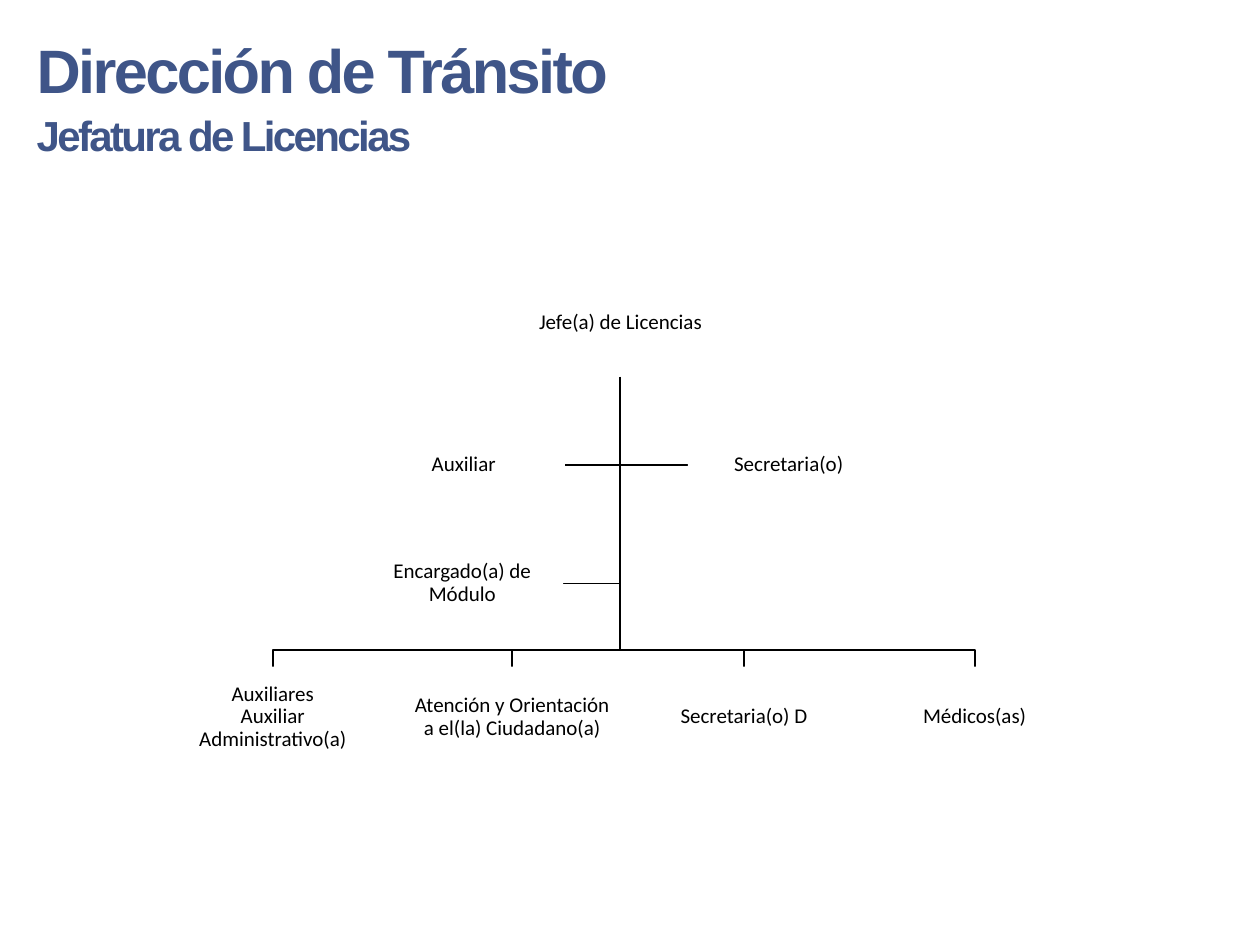
from pptx import Presentation
from pptx.dml.color import RGBColor
from pptx.enum.shapes import MSO_SHAPE
from pptx.enum.text import MSO_ANCHOR, MSO_AUTO_SIZE, PP_ALIGN
from pptx.util import Pt

BLUE = RGBColor(0x3F, 0x55, 0x88)
BLACK = RGBColor(0, 0, 0)
WHITE = RGBColor(255, 255, 255)

TRUNK_X, TRUNK_TOP = 354.24, 215.28
BUS_Y, TEAM_TOP = 371.5, 380.9
TEAM_SIZE = (116, 57.6)
STAFF_SIZE = (115.2, 54.7)


def apply_format(target, values):
    for name, value in values.items():
        setattr(target, name, value)


class OrgChart:
    """Holds the chart style and the slide being drawn."""

    title_font = {"name": "Arial", "bold": True}
    box_font = {"name": "Calibri", "size": Pt(12)}
    box_para = {"alignment": PP_ALIGN.CENTER, "line_spacing": 0.9,
                "space_before": Pt(0), "space_after": Pt(0)}
    box_frame = {"word_wrap": True, "vertical_anchor": MSO_ANCHOR.MIDDLE,
                 "margin_left": Pt(0.72), "margin_right": Pt(0.72),
                 "margin_top": Pt(0.72), "margin_bottom": Pt(0.72)}
    title_frame = {"word_wrap": True, "vertical_anchor": MSO_ANCHOR.TOP,
                   "auto_size": MSO_AUTO_SIZE.NONE,
                   "margin_left": Pt(7.2), "margin_right": Pt(7.2),
                   "margin_top": Pt(7), "margin_bottom": Pt(0)}

    def __init__(self, page):
        self.page = page

    def title(self, lines, left, top, width, height):
        """Write (text, size) lines into the title placeholder."""
        title = self.page.shapes.title
        apply_format(title, {"left": Pt(left), "top": Pt(top),
                             "width": Pt(width), "height": Pt(height)})
        frame = title.text_frame
        apply_format(frame, self.title_frame)
        for index, (text, size) in enumerate(lines):
            para = frame.add_paragraph() if index else frame.paragraphs[0]
            apply_format(para, {"alignment": PP_ALIGN.LEFT, "line_spacing": 1.0,
                                "space_before": Pt(2 * index), "space_after": Pt(0)})
            span = para.add_run()
            span.text = text
            apply_format(span.font, {**self.title_font, "size": Pt(size)})
            span.font.color.rgb = BLUE
            span.font._element.set("spc", "-150")

    def box(self, text, left, top, size):
        box = self.page.shapes.add_shape(
            MSO_SHAPE.RECTANGLE, Pt(left), Pt(top), *map(Pt, size))
        box.shadow.inherit = False
        box.fill.solid()
        box.fill.fore_color.rgb = WHITE
        box.line.fill.background()
        frame = box.text_frame
        apply_format(frame, self.box_frame)
        frame.text = text
        for para in frame.paragraphs:
            apply_format(para, self.box_para)
            apply_format(para.font, self.box_font)
            para.font.color.rgb = BLACK

    def branch(self, *points):
        """Draw an open line from the top of the trunk through the points."""
        builder = self.page.shapes.build_freeform(
            Pt(TRUNK_X), Pt(TRUNK_TOP), scale=1.0)
        builder.add_line_segments(
            [(Pt(x), Pt(y)) for x, y in points], close=False)
        branch = builder.convert_to_shape()
        branch.shadow.inherit = False
        branch.fill.background()
        branch.line.color.rgb = BLACK
        branch.line.width = Pt(1)


def main():
    deck = Presentation()
    deck.slide_width, deck.slide_height = Pt(720), Pt(540)
    chart = OrgChart(deck.slides.add_slide(deck.slide_layouts[5]))
    chart.title([("Dirección de Tránsito", 35), ("Jefatura de Licencias", 24)],
                13.7, 11.5, 537, 78.5)

    staff = [("Encargado(a) de Módulo", 206.6, 306),
             ("Secretaria(o)", 393.1, 238.3),
             ("Auxiliar", 207.4, 238.3)]
    teams = [("Médicos(as)", 499),
             ("Secretaria(o) D", 367.2),
             ("Atención y Orientación a el(la) Ciudadano(a)", 234.7),
             ("Auxiliares\nAuxiliar Administrativo(a)", 97.9)]

    for _, left, top in staff:
        middle = top + STAFF_SIZE[1] / 2
        near_side = left if left > TRUNK_X else left + STAFF_SIZE[0]
        chart.branch((TRUNK_X, middle), (near_side, middle))
    for _, left in teams:
        center = left + TEAM_SIZE[0] / 2
        chart.branch((TRUNK_X, BUS_Y), (center, BUS_Y), (center, TEAM_TOP))

    chart.box("Jefe(a) de Licencias", 270.7, 153.4, (167.8, 61.9))
    for text, left, top in staff:
        chart.box(text, left, top, STAFF_SIZE)
    for text, left in teams:
        chart.box(text, left, TEAM_TOP, TEAM_SIZE)
    deck.save("out.pptx")


if __name__ == "__main__":
    main()
